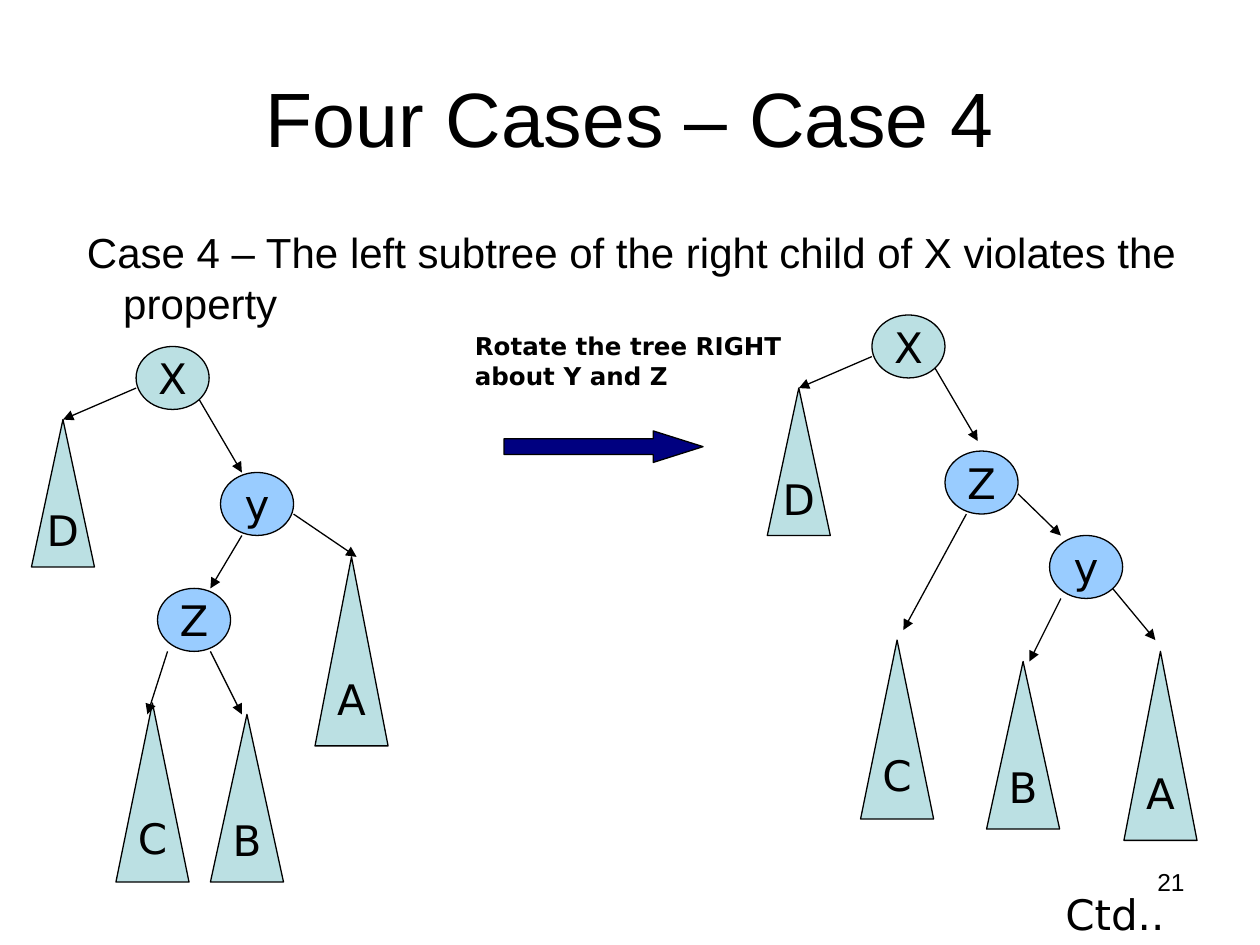
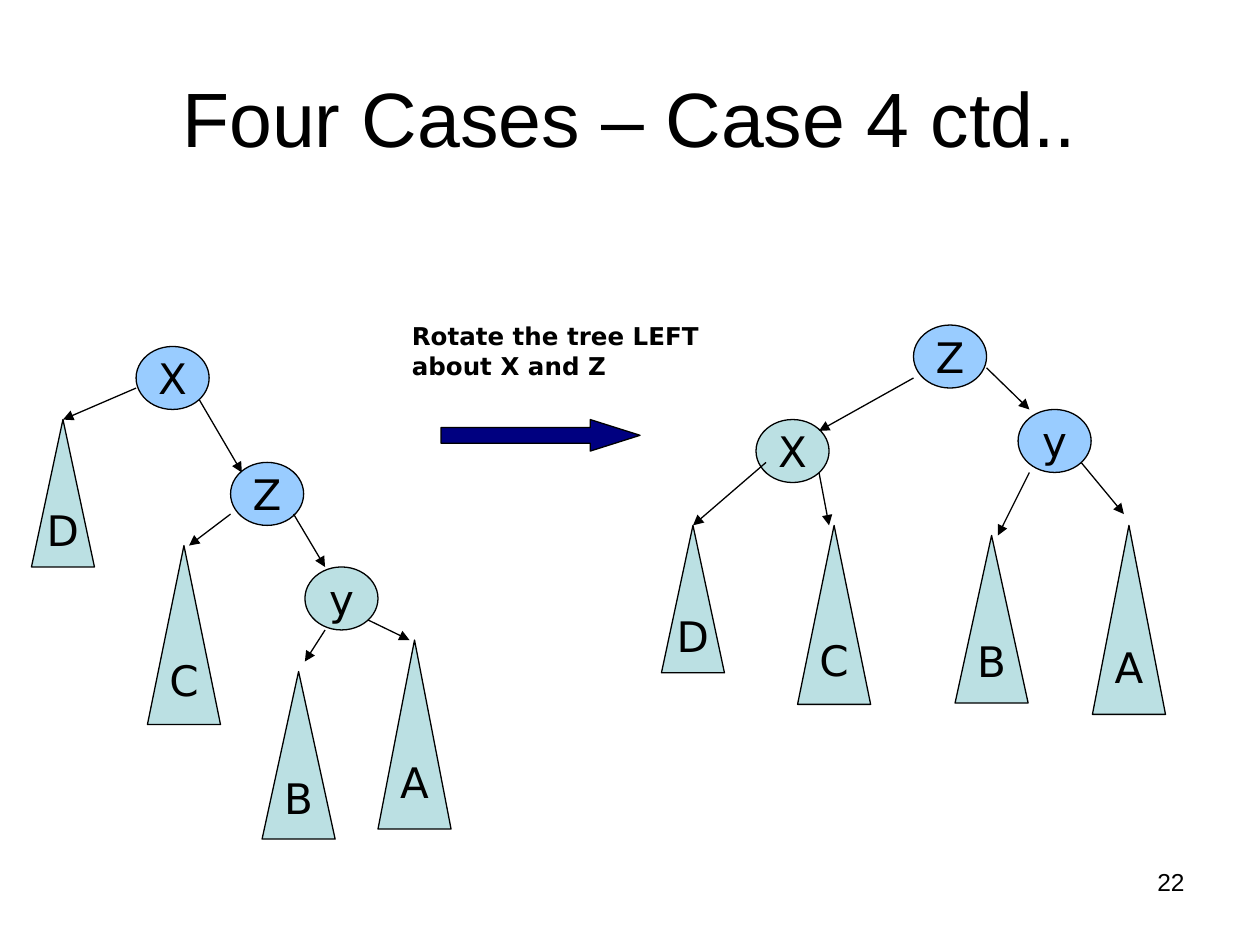
import pptx
import pptx.util
import pptx.dml.color
import pptx.enum.shapes
import pptx.enum.text
import pptx.oxml.ns
import lxml.etree

Inches, Pt = pptx.util.Inches, pptx.util.Pt
Preset = pptx.enum.shapes.MSO_SHAPE
Align = pptx.enum.text.PP_ALIGN
Anchor = pptx.enum.text.MSO_ANCHOR
AutoSize = pptx.enum.text.MSO_AUTO_SIZE
qn = pptx.oxml.ns.qn

BLACK, PALE, BLUE, NAVY = "000000", "BBE0E3", "99CCFF", "000080"
SANS, LABEL = "Arial", "DejaVu Sans"
NODE_SIZE = (0.58, 0.5)
SUBTREE_SIZES = {"A": (0.58, 1.5), "B": (0.58, 1.33),
                 "C": (0.58, 1.42), "D": (0.5, 1.17)}


def rgb(hex_color):
    return pptx.dml.color.RGBColor.from_string(hex_color)


class TreeDeck:
    def __init__(self):
        self.prs = pptx.Presentation()
        self.prs.slide_width, self.prs.slide_height = Inches(10), Inches(7.5)
        self.slide = None

    def new_slide(self, heading, number):
        self.slide = self.prs.slides.add_slide(self.prs.slide_layouts[5])
        title = self.slide.shapes.title
        title.left, title.top = Inches(0.5), Inches(0.3)
        title.width, title.height = Inches(9), Inches(1.25)
        title.text_frame.auto_size = AutoSize.NONE
        title.text_frame.vertical_anchor = Anchor.MIDDLE
        self.set_words(title, heading, 44, SANS, Align.CENTER)
        self.text(7.17, 6.83, 2.33, 0.52, number, 14, SANS, Align.RIGHT)

    def set_words(self, shape, words, size, font, align, bold=False):
        paragraph = shape.text_frame.paragraphs[0]
        paragraph.text = words
        paragraph.alignment = align
        for run in paragraph.runs:
            run.font.size, run.font.name, run.font.bold = Pt(size), font, bold
            run.font.color.rgb = rgb(BLACK)
        return paragraph

    def text(self, x, y, width, height, words, size, font,
             align=Align.LEFT, bold=False, before=0):
        box = self.slide.shapes.add_textbox(
            Inches(x), Inches(y), Inches(width), Inches(height))
        box.text_frame.word_wrap = True
        paragraph = self.set_words(box, words, size, font, align, bold)
        paragraph.space_before = Pt(before)
        return paragraph

    def outline(self, preset, x, y, width, height, fill):
        shape = self.slide.shapes.add_shape(
            preset, Inches(x), Inches(y), Inches(width), Inches(height))
        shape.shadow.inherit = False
        shape.fill.solid()
        shape.fill.fore_color.rgb = rgb(fill)
        shape.line.color.rgb = rgb(BLACK)
        shape.line.width = Pt(0.75)
        return shape

    def labelled(self, preset, name, x, y, size, fill):
        shape = self.outline(preset, x, y, *size, fill)
        shape.text_frame.word_wrap = False
        shape.text_frame.vertical_anchor = Anchor.MIDDLE
        self.set_words(shape, name, 24, LABEL, Align.CENTER)

    def node(self, name, x, y, fill=BLUE):
        self.labelled(Preset.OVAL, name, x, y, NODE_SIZE, fill)

    def subtree(self, name, x, y):
        self.labelled(Preset.FLOWCHART_EXTRACT, name, x, y,
                      SUBTREE_SIZES[name], PALE)

    def edges(self, *ends, x=0, y=0):
        """Draw arrows given as (x1, y1, x2, y2), offset by x and y."""
        for x1, y1, x2, y2 in ends:
            edge = self.slide.shapes.add_connector(
                pptx.enum.shapes.MSO_CONNECTOR.STRAIGHT,
                Inches(x + x1), Inches(y + y1), Inches(x + x2), Inches(y + y2))
            edge.line.color.rgb = rgb(BLACK)
            edge.line.width = Pt(0.75)
            line = edge.line._get_or_add_ln()
            lxml.etree.SubElement(line, qn("a:tailEnd"), type="triangle")
            lxml.etree.SubElement(edge._element.spPr, qn("a:effectLst"))

    def rotation(self, x, y, words, arrow_y):
        self.text(x, y, 2.75, 0.57, words, 14, LABEL, bold=True, before=7)
        arrow = self.outline(Preset.RIGHT_ARROW, x + 0.33, arrow_y, 1.58, 0.25, NAVY)
        arrow.adjustments[0], arrow.adjustments[1] = 0.5, 1.58

    def x_over_d(self, x, y, fill):
        """Root X with subtree D on its left and an edge to its right child."""
        self.node("X", x, y, fill)
        self.subtree("D", x - 0.83, y + 0.58)
        self.edges((0, 0.33, -0.58, 0.58), (0.5, 0.42, 0.84, 1), x=x, y=y)

    def z_over_y(self, x, y):
        """Z with right child y, which carries subtrees B and A."""
        self.node("Z", x, y)
        self.node("y", x + 0.83, y + 0.67)
        self.subtree("B", x + 0.33, y + 1.67)
        self.subtree("A", x + 1.42, y + 1.59)
        self.edges((0.58, 0.34, 0.92, 0.67), (0.92, 1.17, 0.67, 1.67),
                   (1.33, 1.09, 1.67, 1.5), x=x, y=y)


def right_rotation(deck):
    deck.new_slide("Four Cases – Case 4", "21")
    case = deck.text(0.5, 1.75, 9, 4.95, " Case 4 – The left subtree of the right "
                     "child of X violates the property", 24, SANS, before=5)
    indent = case._p.get_or_add_pPr()
    indent.set("marL", str(Inches(0.38)))
    indent.set("indent", str(Inches(-0.38)))
    deck.rotation(3.67, 2.58, "Rotate the tree RIGHT about Y and Z", 3.42)

    # Before: y above Z
    deck.x_over_d(1.08, 2.75, PALE)
    deck.node("y", 1.75, 3.75)
    deck.node("Z", 1.25, 4.67)
    deck.subtree("A", 2.5, 4.42)
    deck.subtree("C", 0.92, 5.58)
    deck.subtree("B", 1.67, 5.67)
    deck.edges((1.92, 4.25, 1.67, 4.67), (2.33, 4.08, 2.83, 4.42),
               (1.33, 5.17, 1.17, 5.67), (1.67, 5.17, 1.92, 5.67))

    # After: Z above y
    deck.x_over_d(6.92, 2.5, PALE)
    deck.z_over_y(7.5, 3.58)
    deck.subtree("C", 6.83, 5.08)
    deck.edges((7.67, 4.08, 7.17, 5))
    deck.text(8.17, 7, 1.17, 0.5, "Ctd..", 24, LABEL, Align.RIGHT, before=12)


def left_rotation(deck):
    deck.new_slide("Four Cases – Case 4 ctd..", "22")
    deck.rotation(3.17, 2.5, "Rotate the tree LEFT about X and Z", 3.33)

    # Before: X above Z
    deck.x_over_d(1.08, 2.75, BLUE)
    deck.node("Z", 1.83, 3.67)
    deck.node("y", 2.42, 4.5, PALE)
    deck.subtree("C", 1.17, 4.33)
    deck.subtree("B", 2.08, 5.33)
    deck.subtree("A", 3, 5.08)
    deck.edges((1.83, 4.08, 1.5, 4.33), (2.33, 4.08, 2.58, 4.5),
               (2.58, 5, 2.42, 5.25), (2.92, 4.92, 3.25, 5.08))

    # After: Z as the root
    deck.z_over_y(7.25, 2.58)
    deck.node("X", 6, 3.33, PALE)
    deck.subtree("D", 5.25, 4.17)
    deck.subtree("C", 6.33, 4.17)
    deck.edges((7.25, 3, 6.5, 3.42), (6.08, 3.67, 5.5, 4.17),
               (6.5, 3.75, 6.58, 4.17))


def main():
    deck = TreeDeck()
    right_rotation(deck)
    left_rotation(deck)
    deck.prs.save("out.pptx")


if __name__ == "__main__":
    main()
